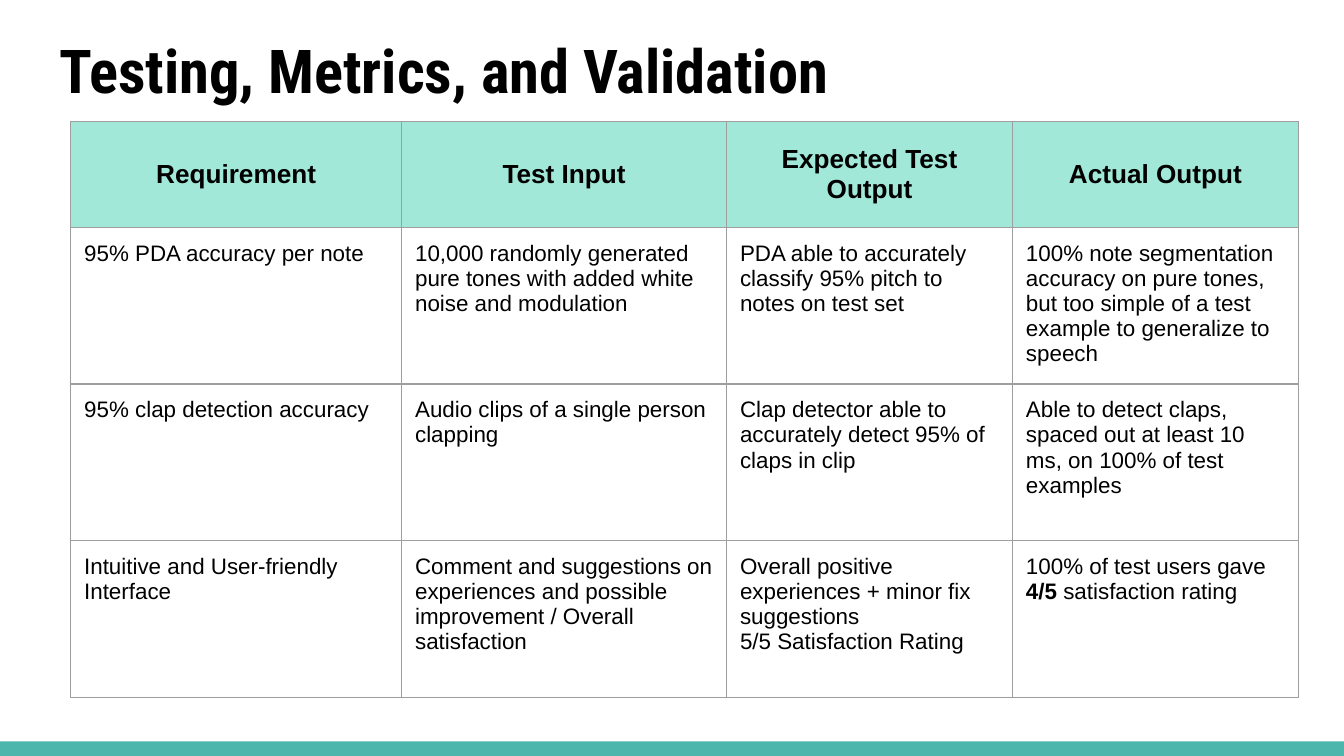
from lxml.etree import SubElement
from pptx import Presentation
from pptx.dml.color import RGBColor
from pptx.enum.shapes import MSO_SHAPE
from pptx.enum.text import MSO_ANCHOR as ANCHOR, MSO_AUTO_SIZE as AUTO, PP_ALIGN as ALIGN
from pptx.oxml.ns import qn
from pptx.util import Pt

BLACK = RGBColor(0x00, 0x00, 0x00)
TEAL = RGBColor(0x4D, 0xB6, 0xAC)
MINT = RGBColor(0xA1, 0xE8, 0xD9)
GREY = RGBColor(0x9E, 0x9E, 0x9E)

WIDTH, HEIGHT = 720, 405
BAR_HEIGHT = 7.8
COLUMN_WIDTHS = [177.3, 174.1, 153.2, 153.2]
ROW_HEIGHTS = [56.8, 84, 84, 84]

# A cell is a list of paragraphs; a paragraph is a list of (text, bold) runs.
HEADERS = ["Requirement", "Test Input", "Expected Test Output", "Actual Output"]
BODY = [
    ["95% PDA accuracy per note",
     "10,000 randomly generated pure tones with added white noise and modulation",
     "PDA able to accurately classify 95% pitch to notes on test set",
     "100% note segmentation accuracy on pure tones, but too simple of a test "
     "example to generalize to speech"],
    ["95% clap detection accuracy",
     "Audio clips of a single person clapping",
     "Clap detector able to accurately detect 95% of claps in clip",
     "Able to detect claps, spaced out at least 10 ms, on 100% of test examples"],
    ["Intuitive and User-friendly Interface",
     "Comment and suggestions on experiences and possible improvement / "
     "Overall satisfaction",
     [[("Overall positive experiences + minor fix suggestions", False)],
      [("5/5 Satisfaction Rating", False)]],
     [[("100% of test users gave ", False), ("4/5 ", True),
       ("satisfaction rating", False)]]],
]


class SlideBuilder:
    title_font, text_font = "Roboto Condensed", "Arial"
    title_size, header_size, body_size = 32.4, 14, 12
    inset, border = 7.2, 0.75

    def __init__(self, slide):
        self.slide = slide

    def set_insets(self, target):
        for side in ("left", "right", "top", "bottom"):
            setattr(target, f"margin_{side}", Pt(self.inset))

    def add_run(self, p, text, font, size, bold):
        r = p.add_run()
        r.text = text
        r.font.name, r.font.size, r.font.bold = font, Pt(size), bold
        r.font.color.rgb = BLACK

    def add_title(self, text, left, top, width, height):
        sp = self.slide.shapes.title
        sp.left, sp.top, sp.width, sp.height = map(Pt, (left, top, width, height))
        tf = sp.text_frame
        tf.word_wrap, tf.auto_size = True, AUTO.NONE
        tf.vertical_anchor = ANCHOR.MIDDLE
        self.set_insets(tf)
        p = tf.paragraphs[0]
        p.alignment = ALIGN.LEFT
        self.add_run(p, text, self.title_font, self.title_size, True)

    def add_bar(self, left, top, width, height, color):
        sp = self.slide.shapes.add_shape(
            MSO_SHAPE.RECTANGLE, *map(Pt, (left, top, width, height)))
        sp.shadow.inherit = False
        sp.fill.solid()
        sp.fill.fore_color.rgb = color
        sp.line.fill.background()

    def add_table(self, headers, body, left, top, widths, heights):
        table = self.slide.shapes.add_table(
            len(heights), len(widths),
            *map(Pt, (left, top, sum(widths), sum(heights)))).table
        table.horz_banding = False
        for column, width in zip(table.columns, widths):
            column.width = Pt(width)
        for row, height in zip(table.rows, heights):
            row.height = Pt(height)
        for i, contents in enumerate([headers, *body]):
            for j, content in enumerate(contents):
                self.fill_cell(table.cell(i, j), content, is_header=i == 0)

    def fill_cell(self, cell, content, is_header):
        self.set_insets(cell)
        self.add_borders(cell)
        cell.vertical_anchor = ANCHOR.MIDDLE if is_header else ANCHOR.TOP
        if is_header:
            cell.fill.solid()
            cell.fill.fore_color.rgb = MINT
        else:
            cell.fill.background()
        size = self.header_size if is_header else self.body_size
        paragraphs = [[(content, is_header)]] if isinstance(content, str) else content
        tf = cell.text_frame
        for k, runs in enumerate(paragraphs):
            p = tf.add_paragraph() if k else tf.paragraphs[0]
            p.alignment = ALIGN.CENTER if is_header else ALIGN.LEFT
            for text, bold in runs:
                self.add_run(p, text, self.text_font, size, bold)

    def add_borders(self, cell):
        """Borders must precede the fill in the cell properties."""
        tcPr = cell._tc.get_or_add_tcPr()
        for side in ("lnL", "lnR", "lnT", "lnB"):
            ln = SubElement(tcPr, qn(f"a:{side}"), w=str(Pt(self.border)))
            fill = SubElement(ln, qn("a:solidFill"))
            SubElement(fill, qn("a:srgbClr"), val=str(GREY))


def main():
    prs = Presentation()
    prs.slide_width, prs.slide_height = Pt(WIDTH), Pt(HEIGHT)
    title_only = prs.slide_layouts[5]
    builder = SlideBuilder(prs.slides.add_slide(title_only))
    builder.add_bar(0, HEIGHT - BAR_HEIGHT, WIDTH, BAR_HEIGHT, TEAL)
    builder.add_title("Testing, Metrics, and Validation", 24.5, 9.5, 671, 55.5)
    builder.add_table(HEADERS, BODY, 37.9, 65, COLUMN_WIDTHS, ROW_HEIGHTS)
    prs.save("out.pptx")


if __name__ == "__main__":
    main()
